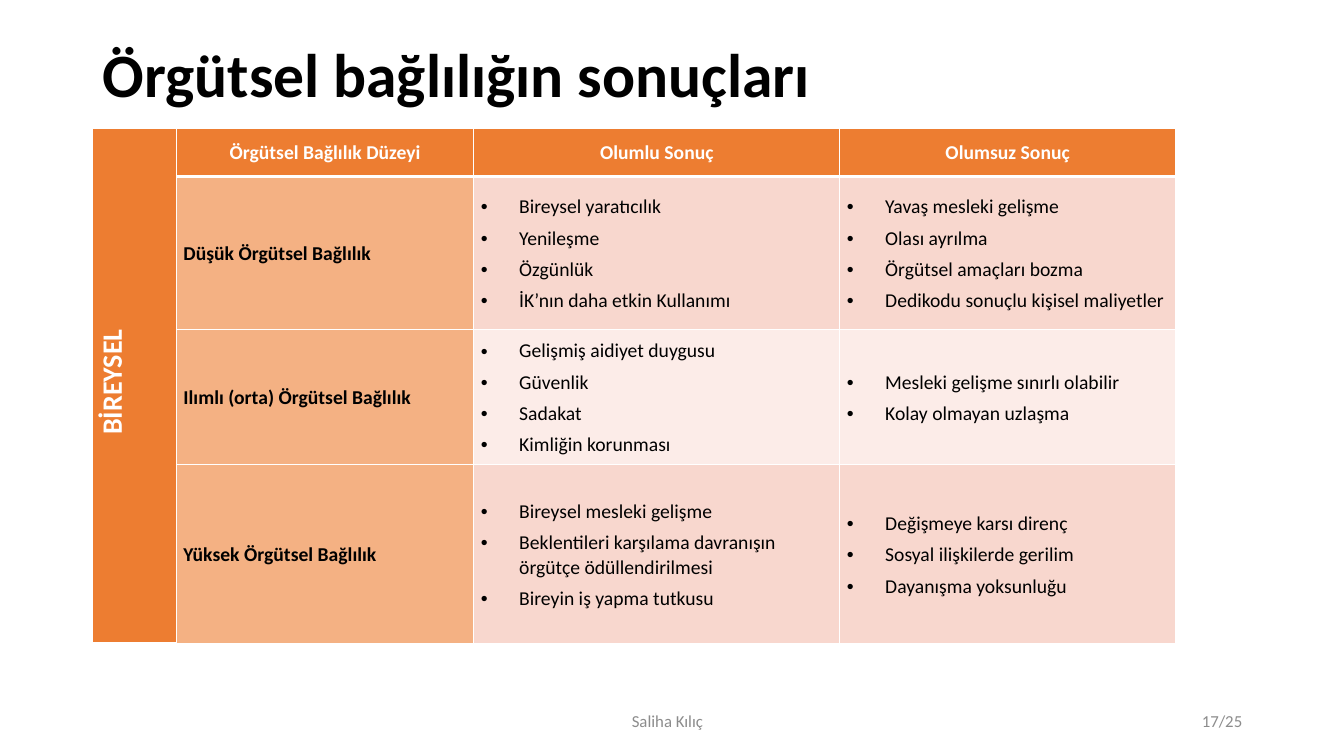
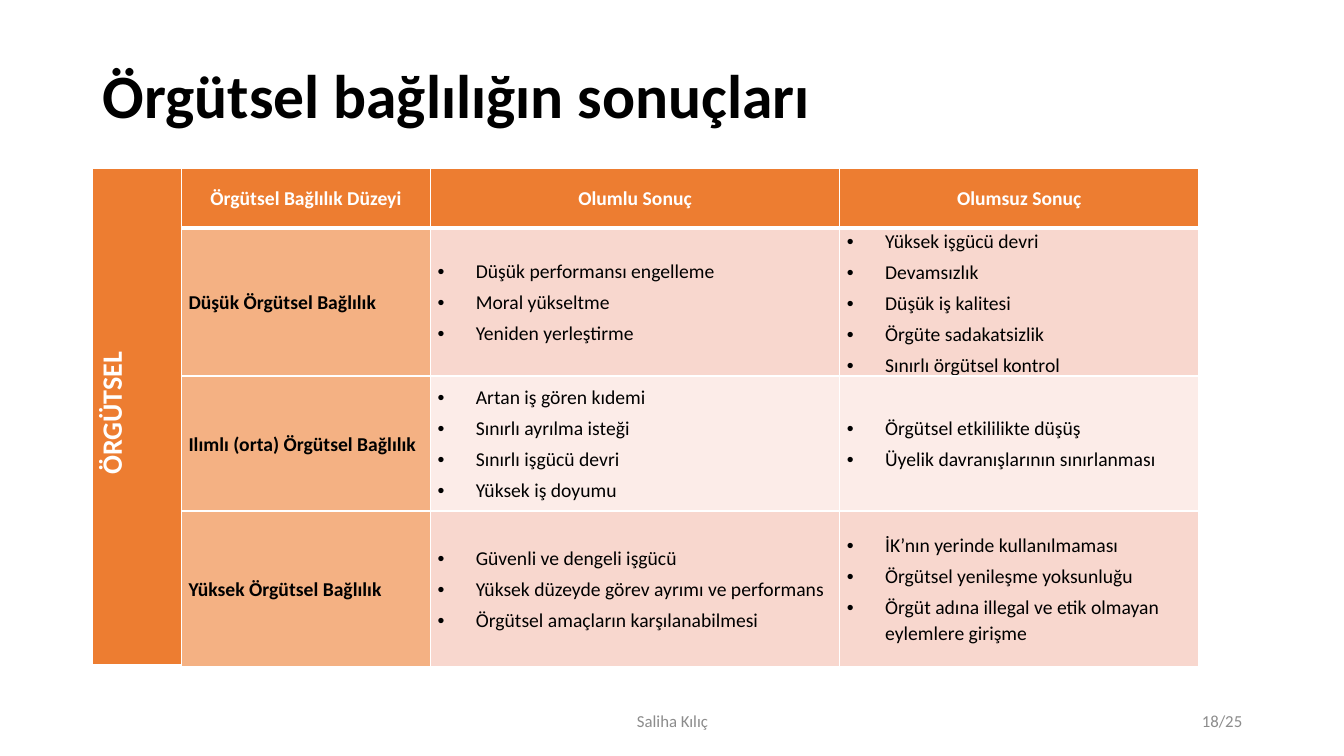
from lxml.etree import SubElement
from pptx import Presentation
from pptx.dml.color import RGBColor
from pptx.enum.text import MSO_ANCHOR, PP_ALIGN
from pptx.oxml.ns import qn
from pptx.util import Inches, Pt

FONT = "Calibri"
WHITE, BLACK, GRAY = "FFFFFF", "000000", "8C8C8C"
HEAD, LEVEL = "ED7D31", "F4B183"
BANDS = ("F8D7CE", "FCECE8")
LEFT = 0.92

HEADS = ("Örgütsel Bağlılık Düzeyi", "Olumlu Sonuç", "Olumsuz Sonuç")
LEVELS = ("Düşük Örgütsel Bağlılık", "Ilımlı (orta) Örgütsel Bağlılık",
          "Yüksek Örgütsel Bağlılık")

PERSONAL = (
    (("Bireysel yaratıcılık", "Yenileşme", "Özgünlük",
      "İK’nın daha etkin Kullanımı"),
     ("Yavaş mesleki gelişme", "Olası ayrılma", "Örgütsel amaçları bozma",
      "Dedikodu sonuçlu kişisel maliyetler")),
    (("Gelişmiş aidiyet duygusu", "Güvenlik", "Sadakat",
      "Kimliğin korunması"),
     ("Mesleki gelişme sınırlı olabilir", "Kolay olmayan uzlaşma")),
    (("Bireysel mesleki gelişme",
      "Beklentileri karşılama davranışın örgütçe ödüllendirilmesi",
      "Bireyin iş yapma tutkusu"),
     ("Değişmeye karsı direnç", "Sosyal ilişkilerde gerilim",
      "Dayanışma yoksunluğu")),
)

GROUP = (
    (("Düşük performansı engelleme", "Moral yükseltme",
      "Yeniden yerleştirme"),
     ("Yüksek işgücü devri", "Devamsızlık", "Düşük iş kalitesi",
      "Örgüte sadakatsizlik", "Sınırlı örgütsel kontrol")),
    (("Artan iş gören kıdemi", "Sınırlı ayrılma isteği",
      "Sınırlı işgücü devri", "Yüksek iş doyumu"),
     ("Örgütsel etkililikte düşüş", "Üyelik davranışlarının sınırlanması")),
    (("Güvenli ve dengeli işgücü",
      "Yüksek düzeyde görev ayrımı ve performans",
      "Örgütsel amaçların karşılanabilmesi"),
     ("İK’nın yerinde kullanılmaması", "Örgütsel yenileşme yoksunluğu",
      "Örgüt adına illegal ve etik olmayan eylemlere girişme")),
)


def color(code):
    return RGBColor.from_string(code)


class Deck:
    """Holds the shared style and the current slide."""

    def __init__(self):
        self.prs = Presentation()
        self.prs.slide_width = Inches(13.33)
        self.prs.slide_height = Inches(7.5)

    def add(self):
        self.slide = self.prs.slides.add_slide(self.prs.slide_layouts[6])

    def style(self, para, size, tone, bold=False, align=PP_ALIGN.LEFT):
        para.alignment = align
        font = para.font
        font.name, font.size, font.bold = FONT, Pt(size), bold
        font.color.rgb = color(tone)

    def text(self, box, words, *look, space=1.0):
        """Write one line of text; look is passed on to style."""
        frame = self.slide.shapes.add_textbox(*map(Inches, box)).text_frame
        frame.word_wrap = True
        frame.vertical_anchor = MSO_ANCHOR.MIDDLE
        para = frame.paragraphs[0]
        para.text = words
        para.line_spacing = space
        self.style(para, *look)

    def title(self, top, height):
        self.text((LEFT, top, 11.5, height), "Örgütsel bağlılığın sonuçları",
                  44, BLACK, True, space=0.9)

    def footer(self, left, page):
        self.text((left, 6.95, 4.5, 0.4), "Saliha Kılıç",
                  12, GRAY, False, PP_ALIGN.CENTER)
        self.text((9.42, 6.95, 3, 0.4), f"{page}/25",
                  12, GRAY, False, PP_ALIGN.RIGHT)

    def border(self, cell, top, bottom):
        props = cell._tc.get_or_add_tcPr()
        for side, width in zip("LRTB", (1, 1, top, bottom)):
            line = SubElement(props, qn(f"a:ln{side}"), w=str(Pt(width)))
            fill = SubElement(line, qn("a:solidFill"))
            SubElement(fill, qn("a:srgbClr"), val=WHITE)

    def cell(self, cell, fill, lines, *look, bullet=False):
        cell.fill.solid()
        cell.fill.fore_color.rgb = color(fill)
        cell.vertical_anchor = MSO_ANCHOR.MIDDLE
        cell.margin_left = cell.margin_right = Inches(0.07)
        cell.margin_top = cell.margin_bottom = 0
        frame = cell.text_frame
        for i, words in enumerate(lines):
            para = frame.add_paragraph() if i else frame.paragraphs[0]
            para.text = words
            para.line_spacing = 1.07
            if i:
                para.space_before = Pt(4)
            if bullet:
                props = para._p.get_or_add_pPr()
                props.set("marL", str(Inches(0.38)))
                props.set("indent", str(-Inches(0.38)))
                SubElement(props, qn("a:buFont"), typeface="Arial")
                SubElement(props, qn("a:buChar"), char="•")
            self.style(para, *look)

    def table(self, top, cols, rows, side, body):
        """Draw the results table with a turned label down its left side."""
        table = self.slide.shapes.add_table(
            len(rows), len(cols), Inches(LEFT), Inches(top),
            Inches(sum(cols)), Inches(sum(rows))).table
        table.horz_banding = False
        for col, width in zip(table.columns, cols):
            col.width = Inches(width)
        for r, height in enumerate(rows):
            table.rows[r].height = Inches(height)
            for c in range(len(cols)):
                self.border(table.cell(r, c), 3 if r == 1 and c else 1,
                            1 if r else 3)

        label = table.cell(0, 0)
        label.merge(table.cell(len(rows) - 1, 0))
        self.cell(label, HEAD, [side], 20, WHITE, True, PP_ALIGN.CENTER)
        label._tc.get_or_add_tcPr().set("vert", "vert270")
        para = label.text_frame.paragraphs[0]
        para._p.get_or_add_pPr().set("marL", str(Inches(0.08)))

        for c, head in enumerate(HEADS, 1):
            self.cell(table.cell(0, c), HEAD, [head],
                      14, WHITE, True, PP_ALIGN.CENTER)
        for r, (level, lists) in enumerate(zip(LEVELS, body), 1):
            self.cell(table.cell(r, 1), LEVEL, [level], 14, BLACK, True)
            for c, lines in enumerate(lists, 2):
                self.cell(table.cell(r, c), BANDS[(r - 1) % 2], lines,
                          14, BLACK, bullet=True)


def main():
    deck = Deck()

    deck.add()
    deck.title(0.4, 0.73)
    deck.table(1.27, (0.83, 2.95, 3.63, 3.33), (0.48, 1.52, 1.34, 1.78),
               "BİREYSEL", PERSONAL)
    deck.footer(4.37, 17)

    deck.add()
    deck.title(0.54, 0.88)
    deck.table(1.67, (0.88, 2.47, 4.06, 3.56), (0.59, 1.46, 1.34, 1.54),
               "ÖRGÜTSEL", GROUP)
    deck.footer(4.42, 18)

    deck.prs.save("out.pptx")


if __name__ == "__main__":
    main()
